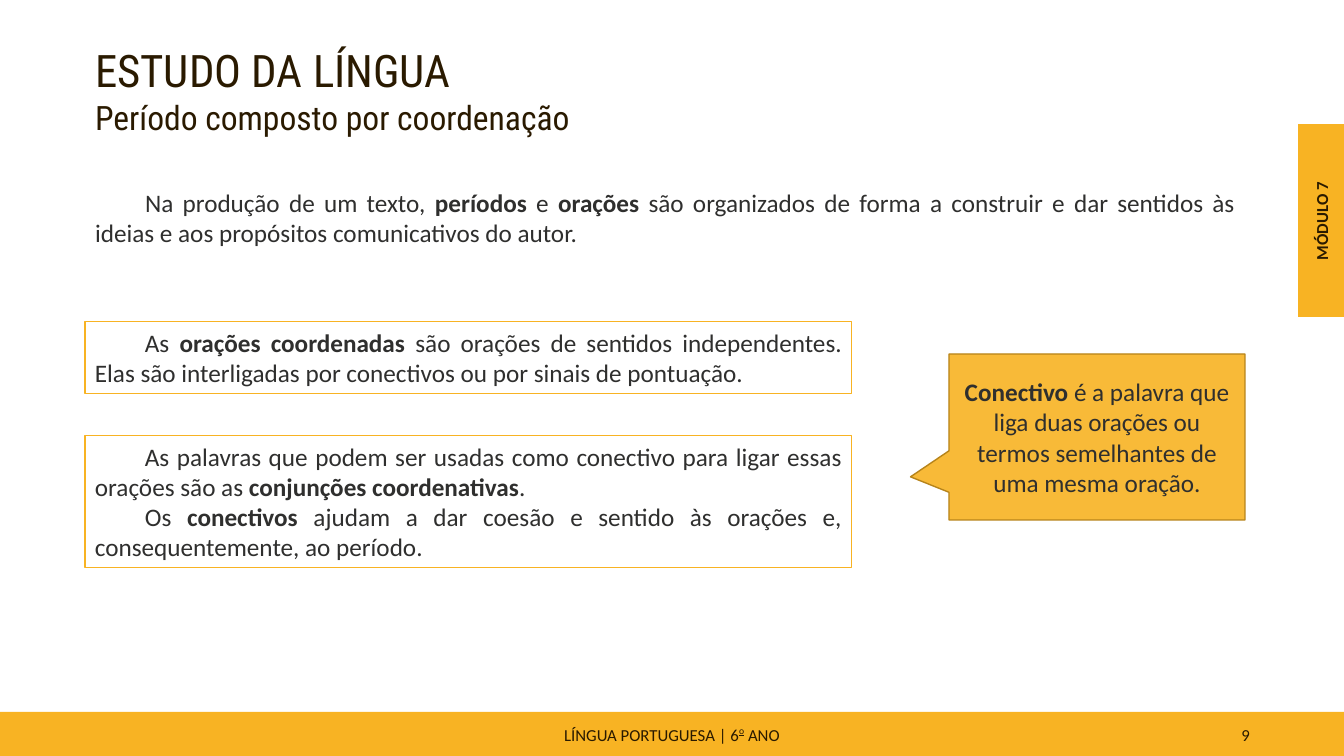
from lxml.etree import SubElement
from pptx import Presentation
from pptx.dml.color import RGBColor
from pptx.enum.shapes import MSO_SHAPE as Shape
from pptx.enum.text import MSO_ANCHOR as Anchor, MSO_AUTO_SIZE as AutoSize, PP_ALIGN as Align
from pptx.oxml.ns import qn
from pptx.util import Pt

EMU_PER_PX = 914400 / 100.8
SLIDE_WIDTH, SLIDE_HEIGHT = 1344, 756
LEFT = 85
BOX_WIDTH = 767
FIRST_LINE_INDENT = 50
COLORS = {"amber": "F8B323", "dark_amber": "B7841A", "brown": "2A1A00", "gray": "2F2F2E"}


def px(length):
    return round(length * EMU_PER_PX)


def color(name):
    return RGBColor.from_string(COLORS[name])


def place(shape, left, top, width, height):
    shape.left, shape.top = px(left), px(top)
    shape.width, shape.height = px(width), px(height)


def write(shape, lines, size=18, font="Calibri", ink="gray",
          align=Align.LEFT, anchor=Anchor.TOP, indent=0):
    """Fill a shape with paragraphs; text between ** marks is bold."""
    frame = shape.text_frame
    frame.word_wrap = True
    frame.auto_size = AutoSize.NONE
    frame.vertical_anchor = anchor
    for number, line in enumerate(lines):
        paragraph = frame.add_paragraph() if number else frame.paragraphs[0]
        paragraph.alignment = align
        paragraph.space_before = Pt(0)
        properties = paragraph._p.get_or_add_pPr()
        properties.set("marL", "0")
        properties.set("indent", str(px(indent)))
        SubElement(properties, qn("a:buNone"))
        for part, text in enumerate(line.split("**")):
            if text:
                run = paragraph.add_run()
                run.text = text
                run.font.name, run.font.size = font, Pt(size)
                run.font.bold = part % 2 == 1
                run.font.color.rgb = color(ink)
    return frame


def add_panel(slide, kind, bounds, fill=None, line=None, line_width=0.75):
    shape = slide.shapes.add_shape(kind, *map(px, bounds))
    shape.shadow.inherit = False
    if fill:
        shape.fill.solid()
        shape.fill.fore_color.rgb = color(fill)
    else:
        shape.fill.background()
    if line:
        shape.line.color.rgb = color(line)
        shape.line.width = Pt(line_width)
    else:
        shape.line.fill.background()
    return shape


def add_label(slide, bounds, text, **style):
    label = slide.shapes.add_textbox(*map(px, bounds))
    write(label, [text], size=12, ink="brown", **style)
    return label


def add_outlined_box(slide, top, height, lines):
    box = add_panel(slide, Shape.RECTANGLE, (LEFT, top, BOX_WIDTH, height), line="amber")
    write(box, lines, align=Align.JUSTIFY, indent=FIRST_LINE_INDENT)


def add_footer(slide):
    add_panel(slide, Shape.RECTANGLE, (0, 712, SLIDE_WIDTH, 45), fill="amber")
    subject = add_label(slide, (445, 716, 454, 38), "LÍNGUA PORTUGUESA | 6**o** ANO",
                        align=Align.CENTER, anchor=Anchor.MIDDLE)
    ordinal = subject.text_frame.paragraphs[0].runs[1].font
    ordinal.bold, ordinal.underline = False, True
    ordinal._element.set("baseline", "45000")
    add_label(slide, (950, 716, 310, 38), "9", align=Align.RIGHT, anchor=Anchor.MIDDLE)


def add_module_tab(slide):
    add_panel(slide, Shape.RECTANGLE, (1298, 124, 46, 193), fill="amber")
    label = add_label(slide, (1225, 206, 193, 30), "**MÓDULO 7**", align=Align.CENTER)
    label.rotation = 270


def add_callout(slide, bounds, text):
    callout = add_panel(slide, Shape.RECTANGULAR_CALLOUT, bounds,
                        fill="amber", line="dark_amber", line_width=1)
    callout.adjustments[0], callout.adjustments[1] = -0.63, 0.24
    fill_color = callout._element.spPr.find(qn("a:solidFill"))[0]
    SubElement(fill_color, qn("a:alpha"), val="90000")
    write(callout, [text], align=Align.CENTER, anchor=Anchor.MIDDLE)


def main():
    presentation = Presentation()
    presentation.slide_width, presentation.slide_height = px(SLIDE_WIDTH), px(SLIDE_HEIGHT)
    slide = presentation.slides.add_slide(presentation.slide_layouts[1])

    # Footer bar and side tab
    add_footer(slide)
    add_module_tab(slide)

    # Title and subtitle
    title, body = slide.placeholders
    place(title, LEFT, 38, 529, 105)
    heading = write(title, ["ESTUDO DA LÍNGUA", "Período composto por coordenação"],
                    size=32, font="Roboto Condensed", ink="brown")
    heading.paragraphs[1].runs[0].font.size = Pt(24)

    # Introduction
    place(body, LEFT, 182, 1160, 72)
    write(body, ["Na produção de um texto, **períodos** e **orações** são organizados de forma a "
                 "construir e dar sentidos às ideias e aos propósitos comunicativos do autor."],
          align=Align.JUSTIFY, indent=FIRST_LINE_INDENT)

    # Definitions
    add_outlined_box(slide, 322, 72, [
        "As **orações coordenadas **são orações de sentidos independentes. "
        "Elas são interligadas por conectivos ou por sinais de pontuação."])
    add_outlined_box(slide, 436, 132, [
        "As palavras que podem ser usadas como conectivo para ligar essas orações "
        "são as **conjunções coordenativas**.",
        "Os **conectivos** ajudam a dar coesão e sentido às orações e, "
        "consequentemente, ao período."])

    # Side note
    add_callout(slide, (949, 354, 296, 166),
                "**Conectivo** é a palavra que liga duas orações ou termos semelhantes "
                "de uma mesma oração.")

    presentation.save("out.pptx")


if __name__ == "__main__":
    main()
